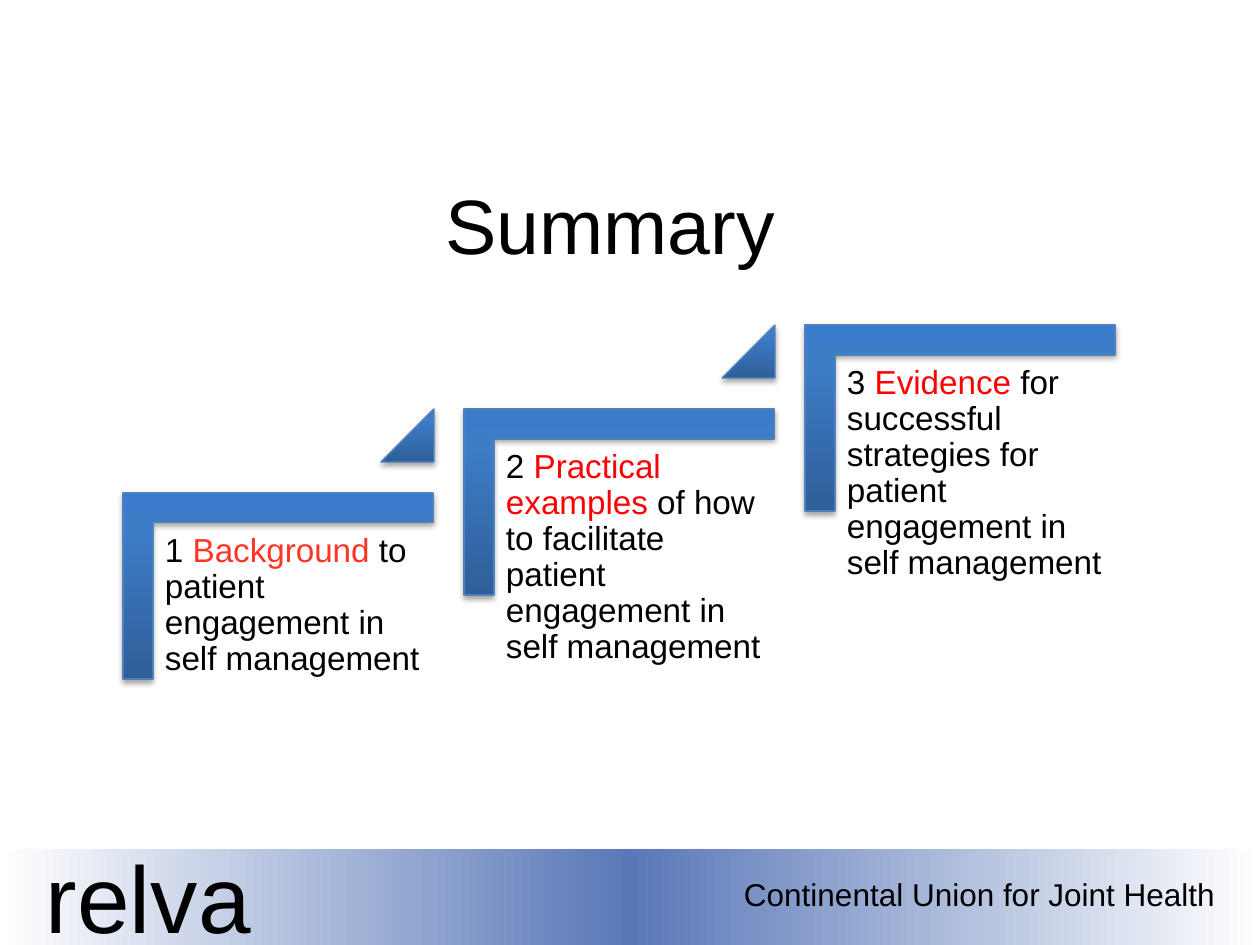
import pptx
import pptx.dml.color
import pptx.enum.shapes
import pptx.enum.text
import pptx.oxml
import pptx.oxml.ns
import pptx.util

SHAPE = pptx.enum.shapes.MSO_SHAPE
ALIGN = pptx.enum.text.PP_ALIGN
ANCHOR = pptx.enum.text.MSO_ANCHOR
DRAWING_NS = pptx.oxml.ns.nsdecls("a")

BLACK, RED, BRIGHT_RED = "000000", "FF0000", "FF3426"
BAND_STOPS = [(0, "FFFFFF"), (50, "5A78B8"), (100, "FFFFFF")]
STEP_STOPS = [(0, "2F5F99"), (80, "3D7CC7"), (100, "3A7CCB")]


def px(length):
    return pptx.util.Emu(round(length * 914400 / 126))


def rgb(value):
    return pptx.dml.color.RGBColor.from_string(value)


class SlideBuilder:
    font = "Arial"
    outline = "4F81BD"

    def __init__(self, slide):
        self.slide = slide

    def fill_text(self, frame, runs, size, margins, align=ALIGN.LEFT,
                  spacing=1.0, before=0, after=0):
        """Fill a text frame with one paragraph of (text, colour) runs."""
        frame.word_wrap = True
        frame.auto_size = pptx.enum.text.MSO_AUTO_SIZE.NONE
        frame.vertical_anchor = ANCHOR.TOP
        (frame.margin_left, frame.margin_top,
         frame.margin_right, frame.margin_bottom) = map(px, margins)
        paragraph = frame.paragraphs[0]
        paragraph.alignment = align
        paragraph.line_spacing = spacing
        paragraph.space_before = pptx.util.Pt(before)
        paragraph.space_after = pptx.util.Pt(after)
        for text, color in runs:
            run = paragraph.add_run()
            run.text = text
            run.font.name = self.font
            run.font.size = pptx.util.Pt(size)
            run.font.color.rgb = rgb(color)

    def title(self, box, text, size):
        heading = self.slide.shapes.title
        heading.left, heading.top, heading.width, heading.height = map(px, box)
        self.fill_text(heading.text_frame, [(text, BLACK)], size,
                       (13, 13, 13, 6), ALIGN.CENTER)

    def text(self, box, runs, size, margins=(13, 6, 13, 6), **style):
        label = self.slide.shapes.add_textbox(*map(px, box))
        self.fill_text(label.text_frame, runs, size, margins, **style)

    def gradient_shape(self, kind, box, stops, angle):
        shape = self.slide.shapes.add_shape(kind, *map(px, box))
        shape.shadow.inherit = False
        stop_xml = "".join(
            f'<a:gs pos="{pos * 1000}"><a:srgbClr val="{color}"/></a:gs>'
            for pos, color in stops)
        shape.element.spPr.insert(2, pptx.oxml.parse_xml(
            f'<a:gradFill {DRAWING_NS} rotWithShape="0"><a:gsLst>{stop_xml}'
            f'</a:gsLst><a:lin ang="{angle * 60000}" scaled="0"/></a:gradFill>'))
        return shape

    def band(self, box):
        self.gradient_shape(SHAPE.RECTANGLE, box, BAND_STOPS, 0).line.fill.background()

    def step_shape(self, kind, box, adjustments):
        """Outlined blue shape with a soft shadow below it."""
        shape = self.gradient_shape(kind, box, STEP_STOPS, 270)
        for index, value in enumerate(adjustments):
            shape.adjustments[index] = value
        shape.line.color.rgb = rgb(self.outline)
        shape.line.width = pptx.util.Pt(0.75)
        effects = shape.element.spPr.find(pptx.oxml.ns.qn("a:effectLst"))
        effects.append(pptx.oxml.parse_xml(
            f'<a:outerShdw {DRAWING_NS} blurRad="40000" dist="23000" dir="5400000" '
            'rotWithShape="0"><a:srgbClr val="000000"><a:alpha val="35000"/>'
            '</a:srgbClr></a:outerShdw>'))
        return shape

    def corner(self, left, top, width, height):
        """Bracket given by its visible box; the shape itself is turned by 90°."""
        shift = (width - height) // 2
        bracket = self.step_shape(
            SHAPE.CORNER, (left + shift, top - shift, height, width), (0.161, 0.161))
        bracket.rotation = 90

    def triangle(self, box):
        self.step_shape(SHAPE.ISOSCELES_TRIANGLE, box, (1.0,))


def main():
    presentation = pptx.Presentation()
    presentation.slide_width, presentation.slide_height = px(1260), px(945)
    summary = SlideBuilder(presentation.slides.add_slide(presentation.slide_layouts[5]))

    # Footer band with the organisation's name
    summary.band((0, 849, 1260, 99))
    summary.text((33, 833, 617, 129), [("relva", BLACK)], 54)
    summary.text((466, 878, 762, 43), [("Continental Union for Joint Health", BLACK)],
                 18, align=ALIGN.RIGHT, spacing=0.75, before=2)

    # Title
    summary.title((54, 165, 1134, 158), "Summary ", 44)

    # Rising steps, each pair joined by a triangle
    steps = [
        [("1 ", BLACK), ("Background ", BRIGHT_RED),
         ("to patient engagement in self management", BLACK)],
        [("2 ", BLACK), ("Practical examples ", RED),
         ("of how to facilitate patient engagement in self management", BLACK)],
        [("3 ", BLACK), ("Evidence", RED),
         (" for successful strategies for patient engagement in self management", BLACK)],
    ]
    step_run, step_rise = 341, 84
    for index, runs in enumerate(steps):
        left, top = 123 + index * step_run, 493 - index * step_rise
        summary.corner(left, top, 310, 186)
        summary.text((left + 32, top + 31, 278, 244), runs, 19,
                     margins=(10, 10, 10, 10), spacing=0.9, after=6.65)
        if index < len(steps) - 1:
            summary.triangle((left + 258, top - step_rise, 53, 53))

    presentation.save("out.pptx")


if __name__ == "__main__":
    main()
